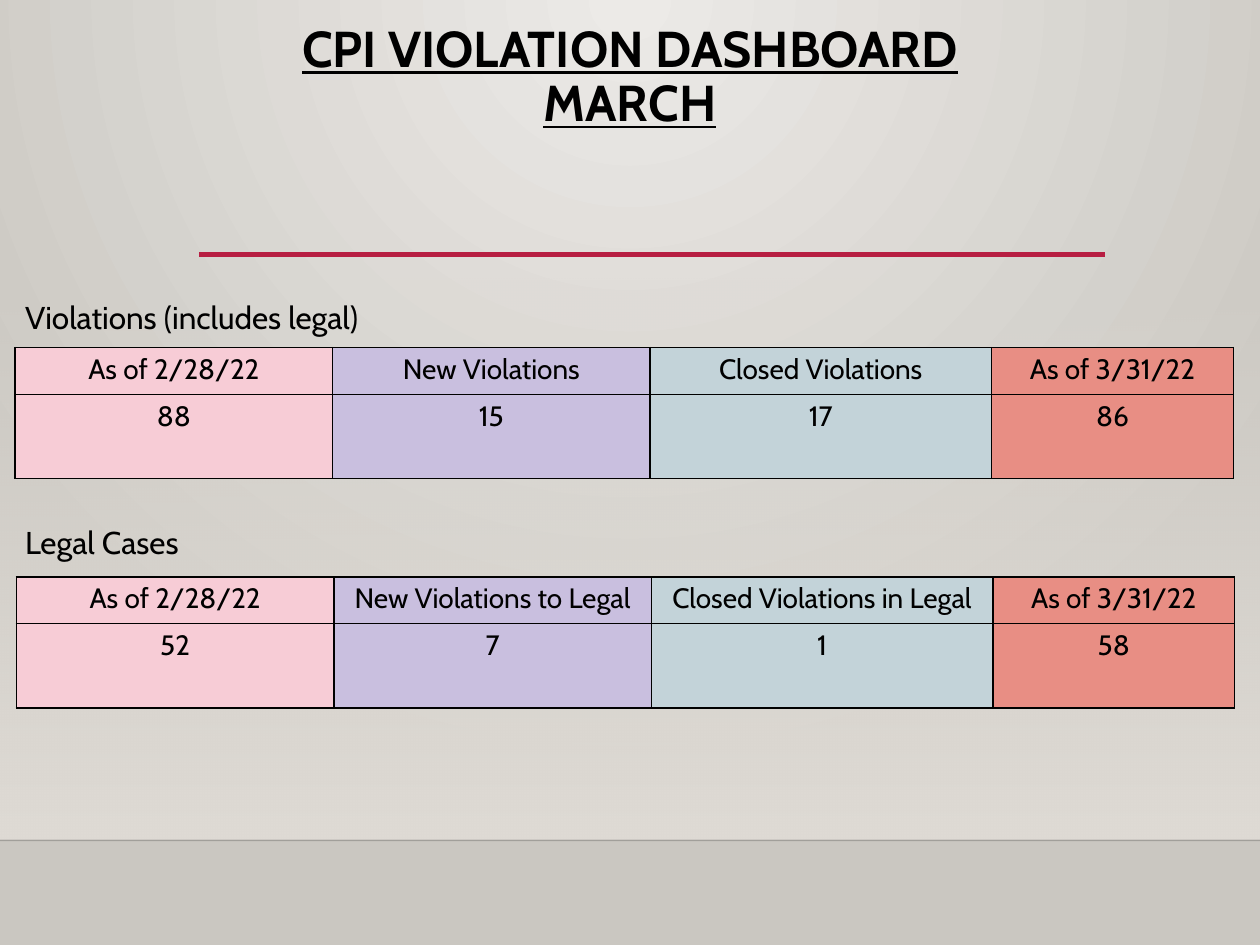
"""Build the CPI violation dashboard slide for March."""
import copy
import lxml.etree
import pptx
import pptx.dml.color
import pptx.enum.shapes
import pptx.enum.text
import pptx.oxml
import pptx.oxml.ns
import pptx.util
from pptx.util import Inches

THEME = {
    "font": "Cabin", "title": 28.8, "label": 18, "cell": 16,
    "text": "000000", "accent": "B71E42", "floor_line": "000001",
    "background": ("ECEAE7", "CAC7C1"), "wall": "DFDBD5",
    "columns": ("F7CCD6", "C9BFDF", "C3D3D9", "E88E84"),
}
NS = pptx.oxml.ns.nsdecls("a")
qn = pptx.oxml.ns.qn
rgb = pptx.dml.color.RGBColor.from_string
CENTER = pptx.enum.text.PP_ALIGN.CENTER


def format_text(tf, size, align=None):
    for p in tf.paragraphs:
        p.alignment = align
        for r in p.runs:
            r.font.name = THEME["font"]
            r.font.size = pptx.util.Pt(size)
            r.font.color.rgb = rgb(THEME["text"])


def set_alpha(element, percent):
    lxml.etree.SubElement(element, qn("a:alpha"), val=str(percent * 1000))


prs = pptx.Presentation()
prs.slide_width, prs.slide_height = Inches(10), Inches(7.5)
s = prs.slides.add_slide(prs.slide_layouts[5])

fill = s.background.fill
fill.gradient()
for stop, color in zip(fill.gradient_stops, THEME["background"]):
    stop.color.rgb = rgb(color)
lin = s.element.find(".//" + qn("a:lin"))
lin.getparent().replace(lin, pptx.oxml.parse_xml(
    f'<a:path {NS} path="circle"><a:fillToRect l="43000" t="0" r="43000" b="100000"/></a:path>'))

wall = s.shapes.add_shape(pptx.enum.shapes.MSO_SHAPE.RECTANGLE,
                          Inches(0), Inches(2.2), Inches(10), Inches(4.46))
wall.shadow.inherit = False
wall.line.fill.background()
wall.fill.gradient()
wall.fill.gradient_angle = 270
for stop in wall.fill.gradient_stops:
    stop.color.rgb = rgb(THEME["wall"])
set_alpha(wall.element.find(".//" + qn("a:srgbClr")), 0)

for x1, x2, y, color, width, alpha in (
    (0, 10, 6.67, THEME["floor_line"], 1, 20),
    (1.58, 8.77, 2.02, THEME["accent"], 2.5, 100),
):
    line = s.shapes.add_connector(pptx.enum.shapes.MSO_CONNECTOR.STRAIGHT,
                                  Inches(x1), Inches(y), Inches(x2), Inches(y))
    line.line.color.rgb = rgb(color)
    line.line.width = pptx.util.Pt(width)
    set_alpha(line.element.find(".//" + qn("a:srgbClr")), alpha)
    lxml.etree.SubElement(line.element.spPr, qn("a:effectLst"))

title = s.shapes.title
title.left, title.top, title.width, title.height = map(Inches, (0.69, 0.14, 8.62, 0.6))
tf = title.text_frame
tf.text = "CPI VIOLATION DASHBOARD\vMARCH"
tf.word_wrap = True
tf.auto_size = pptx.enum.text.MSO_AUTO_SIZE.NONE
tf.vertical_anchor = pptx.enum.text.MSO_ANCHOR.TOP
format_text(tf, THEME["title"], CENTER)
p = tf.paragraphs[0]
p.line_spacing = 0.9
for r in p.runs:
    r.font.bold = r.font.underline = True
title.element.find(".//" + qn("a:br")).append(copy.deepcopy(p.runs[0].font._element))

sections = (
    ("Violations (includes legal)", 2.32, 0.12, 2.76,
     (("As of 2/28/22", "New Violations", "Closed Violations", "As of 3/31/22"),
      ("88", "15", "17", "86"))),
    ("Legal Cases", 4.1, 0.13, 4.58,
     (("As of 2/28/22", "New Violations to Legal", "Closed Violations in Legal", "As of 3/31/22"),
      ("52", "7", "1", "58"))),
)
for label, label_top, left, top, rows in sections:
    tf = s.shapes.add_textbox(Inches(0.1), Inches(label_top), Inches(3.59), Inches(0.4)).text_frame
    tf.word_wrap = True
    tf.text = label
    format_text(tf, THEME["label"])

    table = s.shapes.add_table(2, 4, Inches(left), Inches(top), Inches(9.68), Inches(1.04)).table
    for column, width in zip(table.columns, (2.52, 2.52, 2.71, 1.92)):
        column.width = Inches(width)
    for row, height, values in zip(table.rows, (0.37, 0.67), rows):
        row.height = Inches(height)
        for cell, value, color in zip(row.cells, values, THEME["columns"]):
            cell.text = value
            cell.margin_left = cell.margin_right = Inches(0.07)
            cell.margin_top = cell.margin_bottom = Inches(0.04)
            format_text(cell.text_frame, THEME["cell"], CENTER)
            cell.fill.solid()
            cell.fill.fore_color.rgb = rgb(color)
            for i, side in enumerate(("lnL", "lnR", "lnT", "lnB")):
                cell._tc.tcPr.insert(i, pptx.oxml.parse_xml(
                    f'<a:{side} {NS} w="12700"><a:solidFill><a:srgbClr val="{THEME["text"]}"/>'
                    f'</a:solidFill></a:{side}>'))

prs.save("out.pptx")
